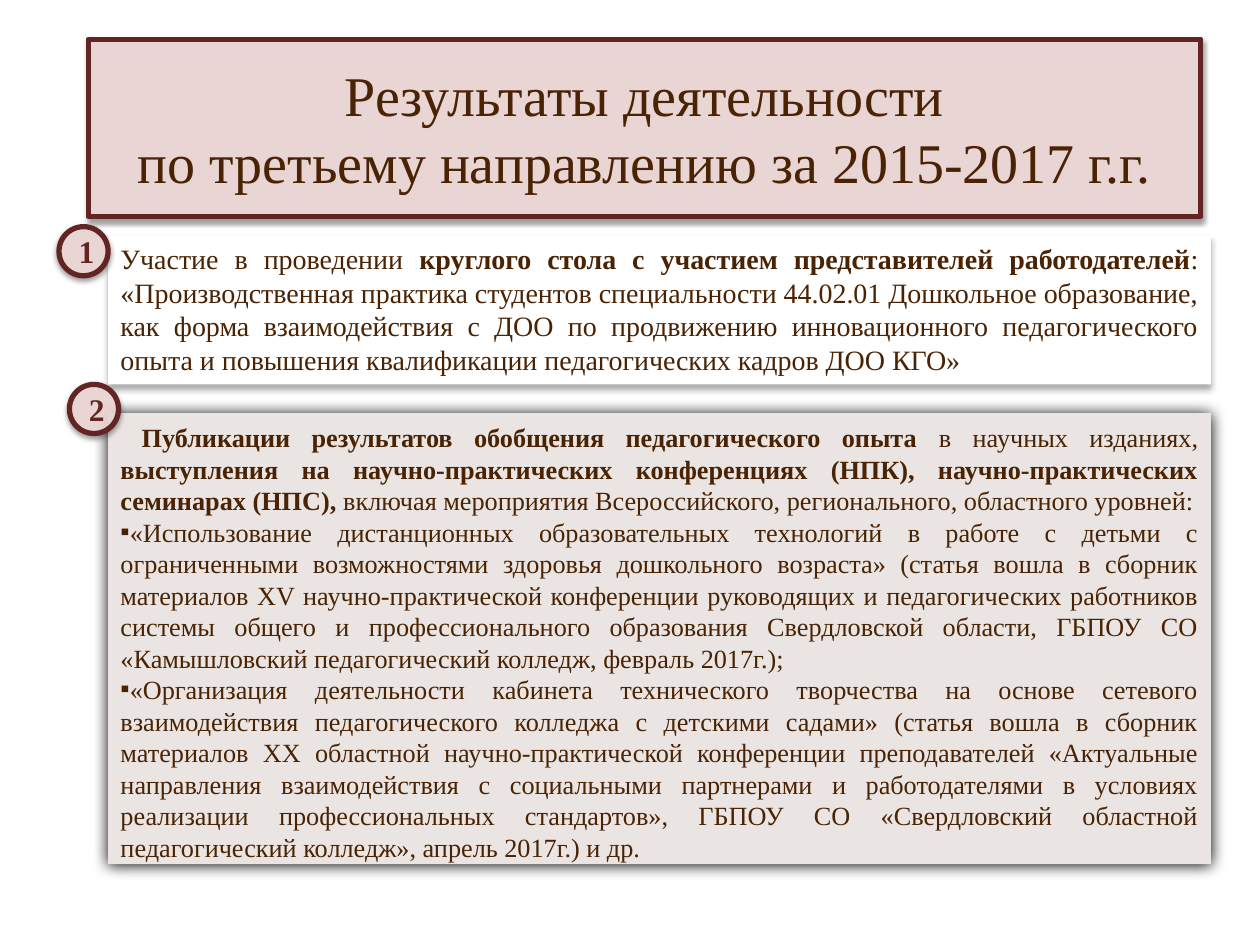
from dataclasses import dataclass

from lxml import etree
from pptx import Presentation
from pptx import util as u
from pptx.dml.color import RGBColor
from pptx.enum import shapes, text
from pptx.oxml import ns


@dataclass(frozen=True)
class Theme:
    """Colours, fonts and type sizes of the slide."""
    ink: str = "492303"
    wine: str = "632523"
    rose: str = "F2DCDB"
    white: str = "FFFFFF"
    sand: str = "EAE5E2"
    serif: str = "Times New Roman"
    sans: str = "Calibri"
    title: float = 32
    number: float = 18
    body: float = 16
    small: float = 15
    border: float = 3
    rose_opacity: int = 88
    rose_shadow: tuple = (38, 3.1, 1.6)
    white_shadow: tuple = (32, 3.5, 2.2)
    sand_shadow: tuple = (100, 8.5, 1)


T = Theme()
SHAPE = shapes.MSO_SHAPE
ALIGN = text.PP_ALIGN


def sub(parent, tag, **attrs):
    """Append a DrawingML child element."""
    return etree.SubElement(parent, ns.qn(tag), {k: str(v) for k, v in attrs.items()})


def add_shadow(s, opacity, blur, dist):
    """Give a shape a soft black shadow that falls downwards."""
    s.shadow.inherit = False
    effects = s._element.spPr.find(ns.qn("a:effectLst"))
    shadow = sub(effects, "a:outerShdw", blurRad=u.Pt(blur), dist=u.Pt(dist),
                 dir=5400000, rotWithShape=0)
    sub(sub(shadow, "a:srgbClr", val="000000"), "a:alpha", val=opacity * 1000)


def add_box(sp, kind, left, top, width, height, fill, shadow, line=None,
            opacity=100, anchor=text.MSO_ANCHOR.TOP):
    """Add a filled shape and return its text frame."""
    s = sp.add_shape(kind, u.Cm(left), u.Cm(top), u.Cm(width), u.Cm(height))
    s.fill.solid()
    s.fill.fore_color.rgb = RGBColor.from_string(fill)
    if opacity < 100:
        colour = s._element.spPr.find(ns.qn("a:solidFill"))[0]
        sub(colour, "a:alpha", val=opacity * 1000)
    if line:
        s.line.color.rgb = RGBColor.from_string(line)
        s.line.width = u.Pt(T.border)
    else:
        s.line.fill.background()
    add_shadow(s, *shadow)
    tf = s.text_frame
    tf.word_wrap = True
    tf.vertical_anchor = anchor
    return tf


def add_rose(sp, kind, left, top, width, height):
    """Add a translucent rose shape with a wine border."""
    return add_box(sp, kind, left, top, width, height, T.rose, T.rose_shadow,
                   T.wine, T.rose_opacity, text.MSO_ANCHOR.MIDDLE)


def add_run(p, words, size=T.body, font=T.serif, color=T.ink, bold=False):
    """Add a formatted run to a paragraph."""
    r = p.add_run()
    r.text = words
    r.font.size = u.Pt(size)
    r.font.name = font
    r.font.bold = bold
    r.font.color.rgb = RGBColor.from_string(color)


def add_par(tf, *pieces, align=ALIGN.JUSTIFY, bullet=None, indent=0, **fmt):
    """Fill the next paragraph; every second piece is bold."""
    p = tf.paragraphs[0]
    if p.runs:
        p = tf.add_paragraph()
    p.alignment = align
    if bullet or indent:
        pPr = p._p.get_or_add_pPr()
        pPr.set("marL", "0")
        pPr.set("indent", str(u.Cm(indent)))
    if bullet:
        sub(pPr, "a:buFont", typeface=T.serif)
        sub(pPr, "a:buChar", char=bullet)
    for i, words in enumerate(pieces):
        add_run(p, words, **{"bold": i % 2 == 1, **fmt})
    return p


def add_title(sp):
    """Add the framed slide title."""
    tf = add_rose(sp, SHAPE.RECTANGLE, 1.78, 0.79, 22.43, 3.58)
    fmt = dict(align=ALIGN.CENTER, size=T.title)
    add_par(tf, "Результаты деятельности", **fmt)
    add_par(tf, "по третьему направлению за 2015-2017 г.г.", indent=-0.56, **fmt)


def add_round_table(sp):
    """Add the first result."""
    tf = add_box(sp, SHAPE.RECTANGLE, 2.18, 4.75, 22.23, 3, T.white, T.white_shadow)
    add_par(tf, "Участие в проведении ",
            "круглого стола с участием представителей работодателей",
            ": «Производственная практика студентов специальности 44.02.01 Дошкольное "
            "образование, как форма взаимодействия с ДОО по продвижению инновационного "
            "педагогического опыта и повышения квалификации педагогических кадров ДОО КГО»")


def add_publications(sp):
    """Add the second result with its list of articles."""
    tf = add_box(sp, SHAPE.RECTANGLE, 2.18, 8.33, 22.23, 9.09, T.sand, T.sand_shadow)
    p = tf.paragraphs[0]
    add_run(p, " ", font=T.sans)
    p.alignment = ALIGN.JUSTIFY
    for words, bold in (
        ("Публикации результатов обобщения педагогического опыта", True),
        (" в научных изданиях, ", False),
        ("выступления на научно-практических конференциях (НПК), "
         "научно-практических семинарах (НПС), ", True),
        ("включая мероприятия Всероссийского, регионального, областного уровней:", False),
    ):
        add_run(p, words, size=T.small, bold=bold)
    for article in (
        "«Использование дистанционных образовательных технологий в работе с детьми с "
        "ограниченными возможностями здоровья дошкольного возраста» (статья вошла в сборник "
        "материалов XV научно-практической конференции руководящих и педагогических "
        "работников системы общего и профессионального образования Свердловской области, "
        "ГБПОУ СО «Камышловский педагогический колледж, февраль 2017г.);",
        "«Организация деятельности кабинета технического творчества на основе сетевого "
        "взаимодействия педагогического колледжа с детскими садами» (статья вошла в сборник "
        "материалов XX областной научно-практической конференции преподавателей «Актуальные "
        "направления взаимодействия с социальными партнерами и работодателями в условиях "
        "реализации профессиональных стандартов», ГБПОУ СО «Свердловский областной "
        "педагогический колледж», апрель 2017г.) и др.",
    ):
        add_par(tf, article, bullet="▪", size=T.small)


def add_number(sp, left, top, label):
    """Add a numbered circle."""
    tf = add_rose(sp, SHAPE.OVAL, left, top, 0.99, 0.99)
    add_par(tf, label, align=ALIGN.CENTER, size=T.number, color=T.wine, bold=True)


def main():
    """Build and save the slide."""
    prs = Presentation()
    prs.slide_width, prs.slide_height = u.Cm(25.4), u.Cm(19.05)
    sp = prs.slides.add_slide(prs.slide_layouts[6]).shapes
    add_title(sp)
    add_round_table(sp)
    add_publications(sp)
    add_number(sp, 1.19, 4.57, "1")
    add_number(sp, 1.4, 7.75, "2")
    prs.save("out.pptx")


if __name__ == "__main__":
    main()
